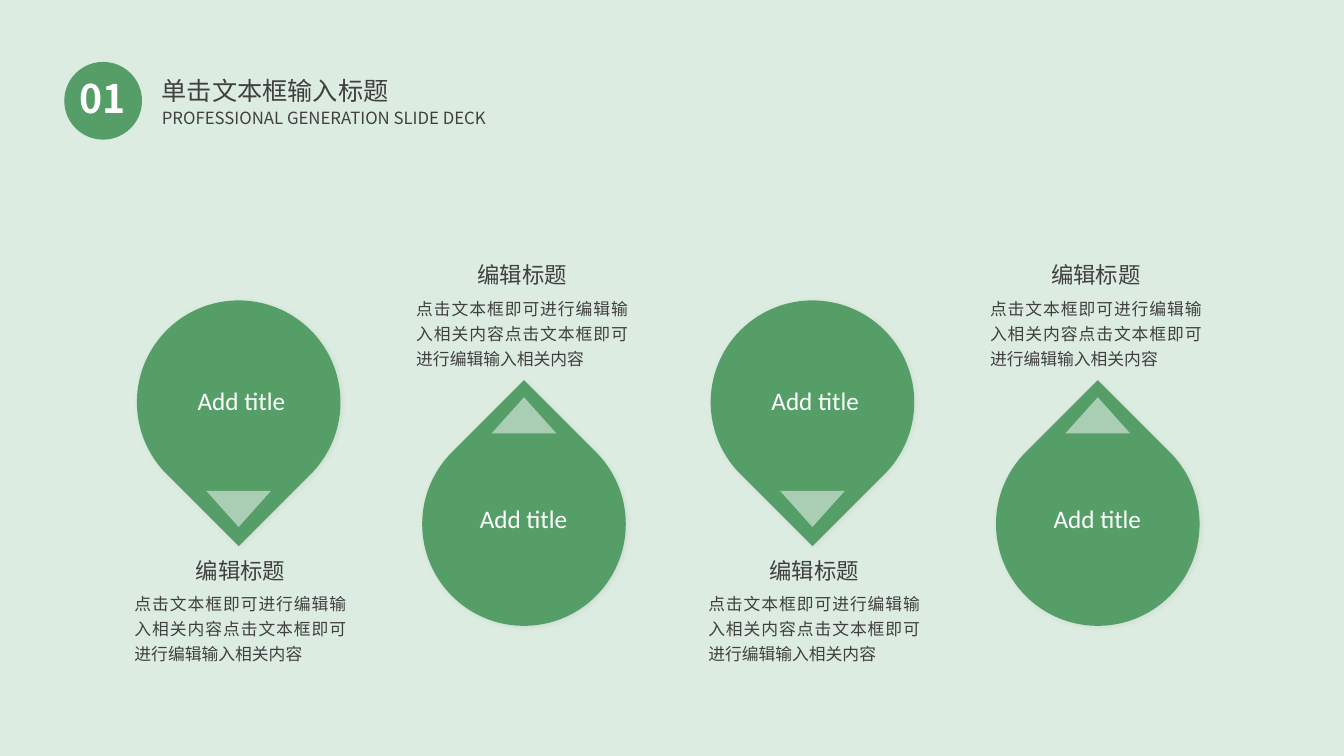
from dataclasses import dataclass

from lxml import etree
from pptx import Presentation
from pptx.dml.color import RGBColor
from pptx.enum.shapes import MSO_SHAPE
from pptx.enum.text import MSO_ANCHOR, MSO_AUTO_SIZE, PP_ALIGN
from pptx.oxml.ns import qn
from pptx.util import Cm, Pt

ELLIPSE, TEARDROP, TRIANGLE = MSO_SHAPE.OVAL, MSO_SHAPE.TEAR, MSO_SHAPE.FLOWCHART_MERGE
LEFT, CENTER, JUSTIFY = PP_ALIGN.LEFT, PP_ALIGN.CENTER, PP_ALIGN.JUSTIFY
TOP, FIT = MSO_ANCHOR.TOP, MSO_AUTO_SIZE.SHAPE_TO_FIT_TEXT

COLORS = {"background": "DCECE0", "green": "559E67", "text": "404040", "white": "FFFFFF"}
CJK_FONT, LATIN_FONT = "Noto Sans CJK SC", "Calibri"
DESCRIPTION = "点击文本框即可进行编辑输入相关内容" * 2

# Lengths in centimetres
DROP_SIZE = 5.13
TRIANGLE_WIDTH, TRIANGLE_HEIGHT = 1.63, 0.91
PAIR_PITCH = 14.46


@dataclass(frozen=True)
class TextStyle:
    size: float
    color: str = "text"
    font: str = CJK_FONT
    align: PP_ALIGN = LEFT
    bold: bool = False
    spacing: float = 1.0
    wrap: bool = True


@dataclass(frozen=True)
class Pin:
    """A teardrop with its triangle, label, heading and description."""
    drop: tuple[float, float]
    drop_rotation: float
    triangle_top: float
    triangle_rotation: float
    label: tuple[float, float]
    heading: tuple[float, float]
    description: tuple[float, float]


NUMBER_STYLE = TextStyle(28, "white", align=CENTER, bold=True)
TITLE_STYLE = TextStyle(18, spacing=1.5, wrap=False)
SUBTITLE_STYLE = TextStyle(12)
LABEL_STYLE = TextStyle(18, "white", LATIN_FONT, CENTER)
HEADING_STYLE = TextStyle(16, align=CENTER)
DESCRIPTION_STYLE = TextStyle(12, align=JUSTIFY, spacing=1.25)

PINS = (
    Pin((3.45, 7.57), 135, 12.37, 0, (4.65, 9.58), (4.22, 13.91), (3.14, 14.71)),
    Pin((10.64, 10.64), 315, 10.01, 180, (11.76, 12.57), (11.32, 6.46), (10.24, 7.27)),
)


def rgb(name: str) -> RGBColor:
    return RGBColor.from_string(COLORS[name])


def write_text(box, text: str, style: TextStyle) -> None:
    frame = box.text_frame
    frame.text = text
    frame.word_wrap = style.wrap
    frame.auto_size = FIT
    frame.vertical_anchor = TOP
    paragraph = frame.paragraphs[0]
    paragraph.alignment = style.align
    paragraph.line_spacing = style.spacing
    font = paragraph.runs[0].font
    font.size = Pt(style.size)
    font.bold = style.bold
    font.color.rgb = rgb(style.color)
    font.name = style.font
    # East Asian glyphs need their own typeface entry
    for properties in box.element.iter(qn("a:rPr")):
        etree.SubElement(properties, qn("a:ea"), typeface=style.font)


def add_text(shapes, text: str, left: float, top: float, width: float, height: float,
             style: TextStyle) -> None:
    box = shapes.add_textbox(Cm(left), Cm(top), Cm(width), Cm(height))
    write_text(box, text, style)


def add_filled(shapes, kind: MSO_SHAPE, left: float, top: float, width: float,
               height: float, color: str, rotation: float = 0):
    shape = shapes.add_shape(kind, Cm(left), Cm(top), Cm(width), Cm(height))
    shape.rotation = rotation
    shape.shadow.inherit = False
    shape.fill.solid()
    shape.fill.fore_color.rgb = rgb(color)
    shape.line.fill.background()
    return shape


def add_alpha(color_element, percent: int) -> None:
    etree.SubElement(color_element, qn("a:alpha"), val=str(percent * 1000))


def add_soft_shadow(shape) -> None:
    effects = shape.element.spPr.find(qn("a:effectLst"))
    shadow = etree.SubElement(effects, qn("a:outerShdw"), blurRad=str(Pt(4)),
                              dist=str(Pt(1)), dir=str(45 * 60000),
                              algn="tl", rotWithShape="0")
    add_alpha(etree.SubElement(shadow, qn("a:srgbClr"), val="000000"), 5)


def add_pin(shapes, pin: Pin, shift: float) -> None:
    drop_left, drop_top = pin.drop
    drop = add_filled(shapes, TEARDROP, drop_left + shift, drop_top,
                      DROP_SIZE, DROP_SIZE, "green", pin.drop_rotation)
    add_soft_shadow(drop)
    triangle_left = drop_left + shift + (DROP_SIZE - TRIANGLE_WIDTH) / 2
    triangle = add_filled(shapes, TRIANGLE, triangle_left, pin.triangle_top,
                          TRIANGLE_WIDTH, TRIANGLE_HEIGHT, "white", pin.triangle_rotation)
    add_alpha(triangle.element.spPr.find(qn("a:solidFill"))[0], 50)

    for text, (left, top), width, height, style in (
        (DESCRIPTION, pin.description, 5.84, 2.18, DESCRIPTION_STYLE),
        ("编辑标题", pin.heading, 3.68, 0.91, HEADING_STYLE),
        ("Add title", pin.label, 2.87, 0.99, LABEL_STYLE),
    ):
        add_text(shapes, text, left + shift, top, width, height, style)


def main() -> None:
    presentation = Presentation()
    presentation.slide_width, presentation.slide_height = Cm(33.87), Cm(19.05)
    slide = presentation.slides.add_slide(presentation.slide_layouts[5])
    slide.background.fill.solid()
    slide.background.fill.fore_color.rgb = rgb("background")
    shapes = slide.shapes

    # Header
    add_filled(shapes, ELLIPSE, 1.62, 1.56, 1.96, 1.96, "green")
    add_text(shapes, "01", 1.68, 1.75, 1.83, 1.45, NUMBER_STYLE)
    title = shapes.title
    title.left, title.top, title.width, title.height = Cm(3.82), Cm(1.38), Cm(6.27), Cm(1.42)
    write_text(title, "单击文本框输入标题", TITLE_STYLE)
    add_text(shapes, "PROFESSIONAL GENERATION SLIDE DECK", 3.83, 2.59, 11.79, 0.76,
             SUBTITLE_STYLE)

    # Two pairs of pins, pointing down and up in turn
    for pair in range(2):
        for pin in PINS:
            add_pin(shapes, pin, pair * PAIR_PITCH)

    presentation.save("out.pptx")


if __name__ == "__main__":
    main()
